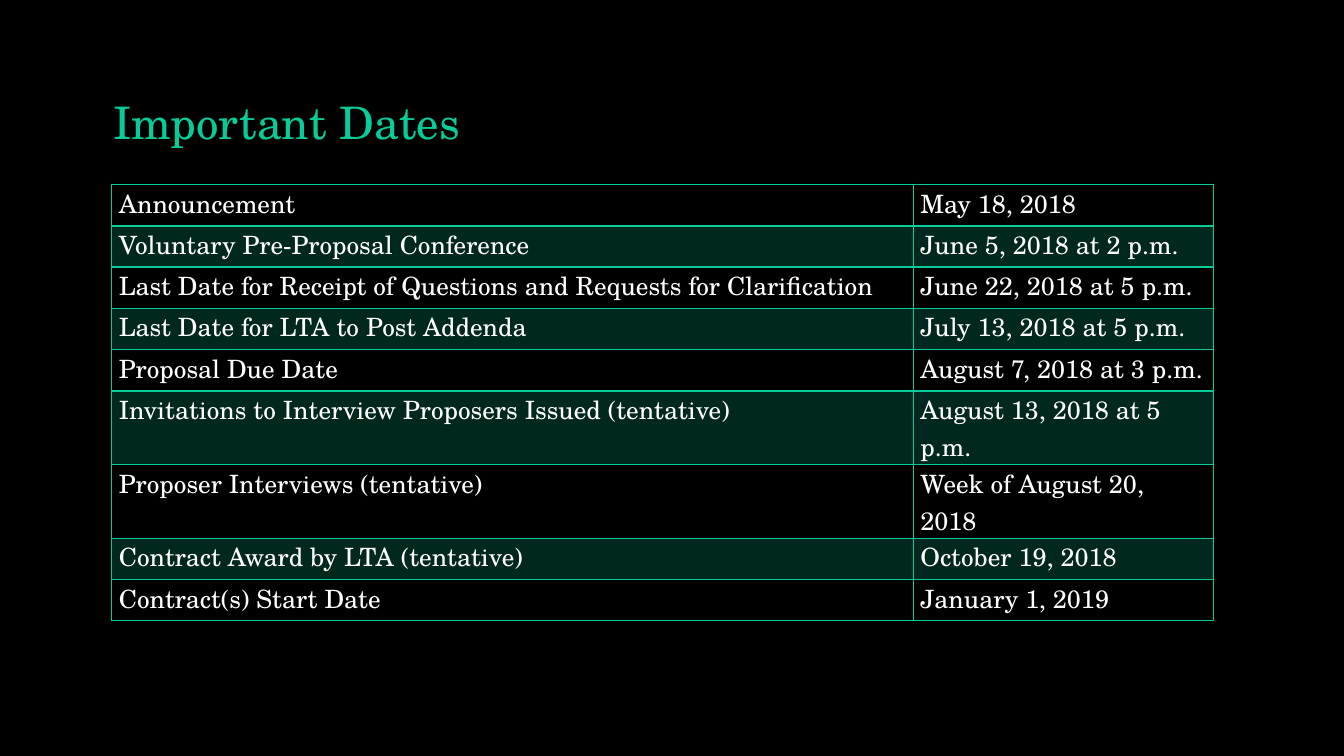
from lxml import etree
from pptx import Presentation
from pptx.dml.color import RGBColor
from pptx.enum.text import MSO_ANCHOR
from pptx.oxml.ns import qn
from pptx.util import Inches, Pt

FONT = "TeX Gyre Schola"
BLACK, WHITE, GREEN = "000000", "FFFFFF", "07CB98"

# Row heights for dates on one line and on two lines
ONE_LINE, TWO_LINES = 0.41, 0.73

DATES = [
    ("Announcement", "May 18, 2018", ONE_LINE),
    ("Voluntary Pre-Proposal Conference", "June 5, 2018 at 2 p.m.", ONE_LINE),
    ("Last Date for Receipt of Questions and Requests for Clarification",
     "June 22, 2018 at 5 p.m.", ONE_LINE),
    ("Last Date for LTA to Post Addenda", "July 13, 2018 at 5 p.m.", ONE_LINE),
    ("Proposal Due Date", "August 7, 2018 at 3 p.m.", ONE_LINE),
    ("Invitations to Interview Proposers Issued (tentative)",
     "August 13, 2018 at 5 p.m.", TWO_LINES),
    ("Proposer Interviews (tentative)", "Week of August 20, 2018", TWO_LINES),
    ("Contract Award by LTA (tentative)", "October 19, 2018", ONE_LINE),
    ("Contract(s) Start Date", "January 1, 2019", ONE_LINE),
]


def rgb(color):
    return RGBColor.from_string(color)


def add_run(p, text, size, color):
    r = p.add_run()
    r.text = text
    r.font.name = FONT
    r.font.size = Pt(size)
    r.font.bold = False
    r.font.color.rgb = rgb(color)


def set_borders(cell, color, widths):
    tc_pr = cell._tc.get_or_add_tcPr()
    # Border lines come before the fill in the cell properties
    for i, (side, width) in enumerate(widths.items()):
        ln = etree.Element(qn(f"a:ln{side}"), w=str(Pt(width)))
        fill = etree.SubElement(ln, qn("a:solidFill"))
        etree.SubElement(fill, qn("a:srgbClr"), val=color)
        tc_pr.insert(i, ln)


def set_fill(cell, color, percent):
    cell.fill.solid()
    cell.fill.fore_color.rgb = rgb(color)
    clr = cell._tc.tcPr.find(qn("a:solidFill")).find(qn("a:srgbClr"))
    etree.SubElement(clr, qn("a:alpha"), val=str(percent * 1000))


def add_title(slide, left, top, width, height, text):
    tf = slide.shapes.add_textbox(
        Inches(left), Inches(top), Inches(width), Inches(height)).text_frame
    tf.word_wrap = True
    tf.vertical_anchor = MSO_ANCHOR.TOP
    p = tf.paragraphs[0]
    p.line_spacing = 0.9
    add_run(p, text, 32, GREEN)


def add_dates_table(slide, left, top, width, dates):
    height = sum(row_height for *_, row_height in dates)
    table = slide.shapes.add_table(
        len(dates), 2, Inches(left), Inches(top),
        Inches(width), Inches(height)).table
    table.first_row = table.horz_banding = False
    date_width = 2.98
    table.columns[0].width = Inches(width - date_width)
    table.columns[1].width = Inches(date_width)

    for i, (*texts, row_height) in enumerate(dates):
        table.rows[i].height = Inches(row_height)
        for j, text in enumerate(texts):
            cell = table.cell(i, j)
            cell.margin_left = cell.margin_right = Inches(0.07)
            cell.margin_top = cell.margin_bottom = 0
            add_run(cell.text_frame.paragraphs[0], text, 18, WHITE)
            # Tint every second row
            if i % 2:
                set_fill(cell, GREEN, 20)
            else:
                cell.fill.background()
            # Heavier rule under the first row
            set_borders(cell, GREEN, {
                "L": 1, "R": 1,
                "T": 2 if i == 1 else 1,
                "B": 2 if i == 0 else 1})


def main():
    prs = Presentation()
    prs.slide_width, prs.slide_height = Inches(13.33), Inches(7.5)
    slide = prs.slides.add_slide(prs.slide_layouts[6])
    slide.background.fill.solid()
    slide.background.fill.fore_color.rgb = rgb(BLACK)
    add_title(slide, 1.03, 0.95, 10.5, 1.17, "Important Dates")
    add_dates_table(slide, 1.11, 1.83, 10.93, DATES)
    prs.save("out.pptx")


if __name__ == "__main__":
    main()
